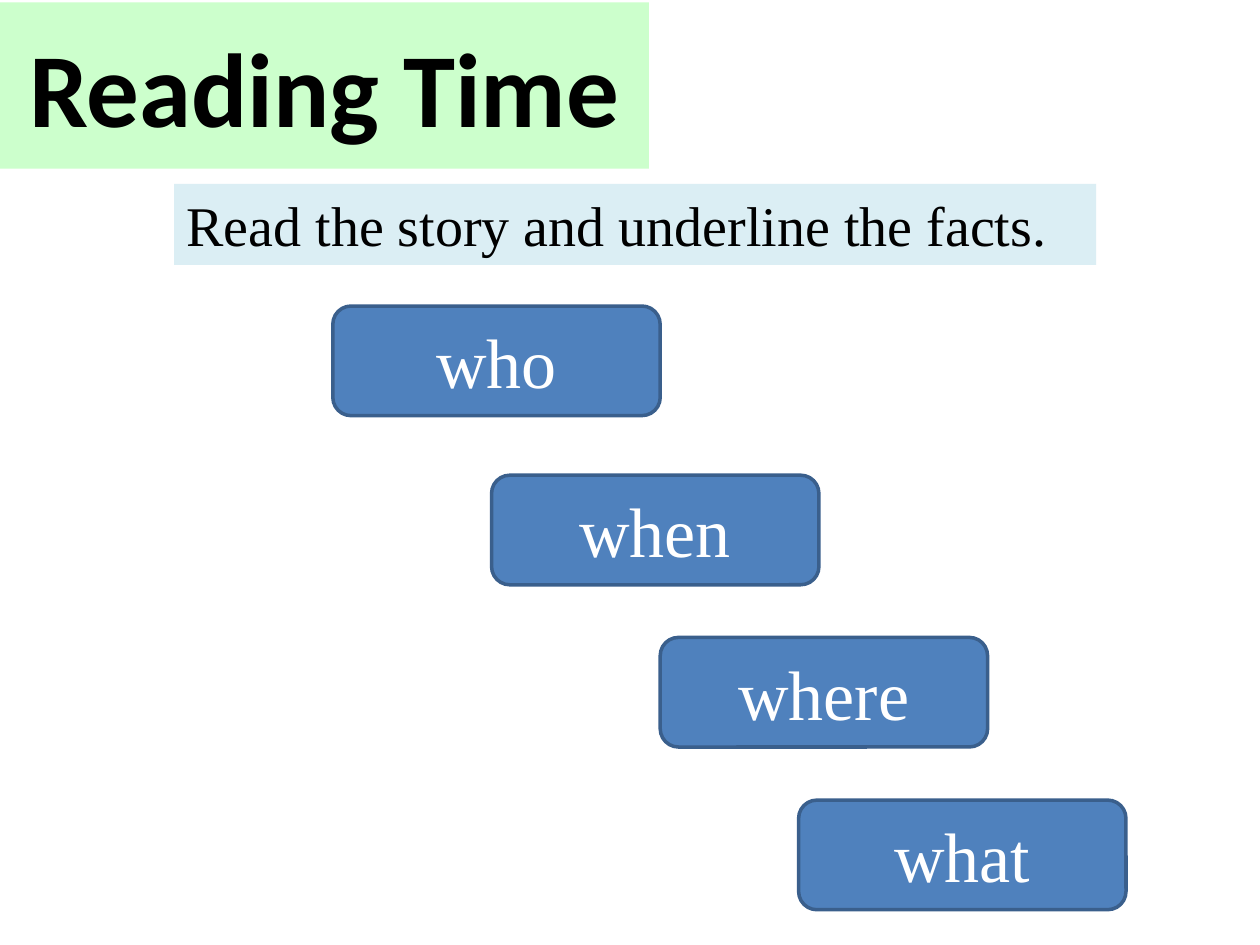
from dataclasses import dataclass
from typing import Optional

from pptx import Presentation
from pptx import util as u
from pptx.dml.color import RGBColor
from pptx.enum import shapes, text

RECT = shapes.MSO_SHAPE.RECTANGLE
ROUNDED = shapes.MSO_SHAPE.ROUNDED_RECTANGLE
ALIGN = text.PP_ALIGN
ANCHOR = text.MSO_ANCHOR


@dataclass
class Style:
    kind: shapes.MSO_SHAPE
    fill: str
    font: str
    size: int
    color: str = "000000"
    line: Optional[str] = None
    bold: bool = False
    align: text.PP_ALIGN = ALIGN.CENTER
    anchor: text.MSO_ANCHOR = ANCHOR.MIDDLE


@dataclass
class Box:
    label: str
    left: float  # all lengths in centimetres
    top: float
    width: float
    height: float


TITLE = Style(RECT, "CCFFCC", "Calibri", 60, bold=True)
TASK = Style(RECT, "DBEEF4", "Times New Roman", 32,
             align=ALIGN.JUSTIFY, anchor=ANCHOR.TOP)
QUESTION = Style(ROUNDED, "4F81BD", "Times New Roman", 40, "FFFFFF", "3A5F8C")

QUESTION_SIZE = (6.6, 2.21)
QUESTIONS = [
    ("who", 6.71, 6.17),
    ("when", 9.91, 9.58),
    ("where", 13.31, 12.85),
    ("what", 16.1, 16.13),
]


def rgb(value: str) -> RGBColor:
    return RGBColor.from_string(value)


def draw_box(s, box: Box, style: Style) -> None:
    sp = s.shapes.add_shape(style.kind, u.Cm(box.left), u.Cm(box.top),
                            u.Cm(box.width), u.Cm(box.height))
    sp.shadow.inherit = False
    sp.fill.solid()
    sp.fill.fore_color.rgb = rgb(style.fill)
    if style.line:
        sp.line.color.rgb = rgb(style.line)
        sp.line.width = u.Pt(2)
    else:
        sp.line.fill.background()

    tf = sp.text_frame
    tf.word_wrap = True
    tf.vertical_anchor = style.anchor
    tf.text = box.label
    p = tf.paragraphs[0]
    p.alignment = style.align
    r = p.runs[0]
    r.font.name = style.font
    r.font.size = u.Pt(style.size)
    r.font.bold = style.bold
    r.font.color.rgb = rgb(style.color)


def main() -> None:
    prs = Presentation()
    prs.slide_width, prs.slide_height = u.Cm(25.4), u.Cm(19.05)
    s = prs.slides.add_slide(prs.slide_layouts[6])

    # Task line
    draw_box(s, Box("Read the story and underline the facts.",
                    3.51, 3.71, 18.59, 1.63), TASK)

    # Question words, stepping down to the right
    for label, left, top in QUESTIONS:
        draw_box(s, Box(label, left, top, *QUESTION_SIZE), QUESTION)

    # Title
    draw_box(s, Box("Reading Time", 0, 0.05, 13.08, 3.35), TITLE)

    prs.save("out.pptx")


if __name__ == "__main__":
    main()
